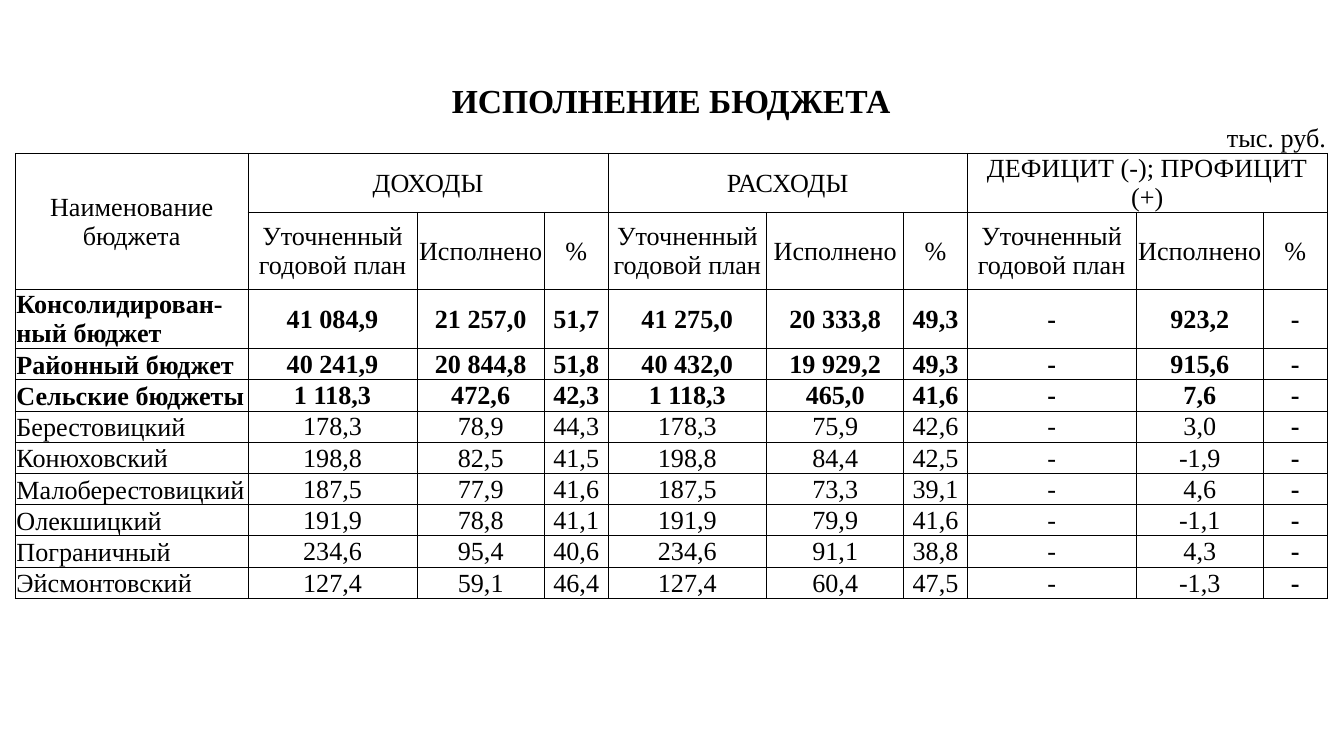
from lxml import etree
from pptx import Presentation
from pptx.dml.color import RGBColor
from pptx.enum.text import MSO_ANCHOR, PP_ALIGN
from pptx.oxml.ns import qn
from pptx.util import Cm, Pt

LEFT, CENTER, RIGHT = PP_ALIGN.LEFT, PP_ALIGN.CENTER, PP_ALIGN.RIGHT
MIDDLE, BOTTOM = MSO_ANCHOR.MIDDLE, MSO_ANCHOR.BOTTOM

FONT = "Times New Roman"
BLACK = "000000"
PLAIN_STYLE = "{2D5ABB26-0587-4C30-8999-92F81FD0307C}"
ALL_SIDES = ("L", "R", "T", "B")

COLUMN_WIDTHS = [4.4, 2.56, 0.63, 1.66, 0.75, 1.2, 3, 0.53,
                 2.06, 0.23, 0.97, 3.19, 1.32, 1.09, 1.2]
ROW_HEIGHTS = [0.72, 0.58, 1.11, 1.46, 1.11] + [0.59] * 8

UNIT_ROW, GROUP_ROW, FIELD_ROW, FIRST_BUDGET_ROW = 1, 2, 3, 4
UNIT_SPANS = [(0, 1), (1, 1), (2, 2), (4, 2), (6, 2), (8, 2), (10, 1), (11, 2), (13, 2)]
FIELD_SPANS = [(1, 2), (3, 2), (5, 1), (6, 1), (7, 2), (9, 2), (11, 1), (12, 2), (14, 1)]
GROUPS = [("ДОХОДЫ", 1, 5), ("РАСХОДЫ", 6, 5), ("ДЕФИЦИТ (-); ПРОФИЦИТ (+)", 11, 4)]
FIELDS = ["Уточненный годовой план", "Исполнено", "%"]

TOTAL_COUNT = 3
BUDGETS = [
    ["Консолидирован-ный бюджет", "41 084,9", "21 257,0", "51,7", "41 275,0", "20 333,8", "49,3", "923,2"],
    ["Районный бюджет", "40 241,9", "20 844,8", "51,8", "40 432,0", "19 929,2", "49,3", "915,6"],
    ["Сельские бюджеты", "1 118,3", "472,6", "42,3", "1 118,3", "465,0", "41,6", "7,6"],
    ["Берестовицкий", "178,3", "78,9", "44,3", "178,3", "75,9", "42,6", "3,0"],
    ["Конюховский", "198,8", "82,5", "41,5", "198,8", "84,4", "42,5", "-1,9"],
    ["Малоберестовицкий", "187,5", "77,9", "41,6", "187,5", "73,3", "39,1", "4,6"],
    ["Олекшицкий", "191,9", "78,8", "41,1", "191,9", "79,9", "41,6", "-1,1"],
    ["Пограничный", "234,6", "95,4", "40,6", "234,6", "91,1", "38,8", "4,3"],
    ["Эйсмонтовский", "127,4", "59,1", "46,4", "127,4", "60,4", "47,5", "-1,3"],
]


def color(value):
    """Return the colour for a hex string."""
    return RGBColor.from_string(value)


def add_borders(cell, sides):
    """Draw thin black lines on the given sides and hide the others."""
    properties = cell._tc.get_or_add_tcPr()
    for side in ALL_SIDES:
        line = etree.SubElement(properties, qn(f"a:ln{side}"), w=str(Pt(0.5)))
        if side in sides:
            fill = etree.SubElement(line, qn("a:solidFill"))
            etree.SubElement(fill, qn("a:srgbClr"), val=BLACK)
        else:
            etree.SubElement(line, qn("a:noFill"))


def prepare_cell(cell, sides):
    """Give a cell its borders, insets, clear fill and empty-text size."""
    add_borders(cell, sides)
    cell.fill.background()
    cell.margin_left = cell.margin_right = cell.margin_top = Cm(0.02)
    cell.margin_bottom = Cm(0)
    end_properties = cell.text_frame.paragraphs[0]._p.get_or_add_endParaRPr()
    end_properties.set("sz", "1400")


def merge(table, row, column, height, width):
    """Merge a block of cells when it is larger than one cell."""
    if height * width > 1:
        table.cell(row, column).merge(table.cell(row + height - 1, column + width - 1))


def write(cell, text, size=14, bold=False, alignment=CENTER, anchor=MIDDLE):
    """Write formatted text into a cell."""
    cell.text = text
    cell.vertical_anchor = anchor
    for paragraph in cell.text_frame.paragraphs:
        paragraph.alignment = alignment
        paragraph.font.name = FONT
        paragraph.font.size = Pt(size)
        paragraph.font.bold = bold
        paragraph.font.color.rgb = color(BLACK)


def add_budget_table(slide):
    """Add the empty, bordered table and return it."""
    shape = slide.shapes.add_table(
        len(ROW_HEIGHTS), len(COLUMN_WIDTHS), Cm(0.29), Cm(1.55),
        Cm(sum(COLUMN_WIDTHS)), Cm(sum(ROW_HEIGHTS)))
    table = shape.table
    table.first_row = table.horz_banding = False
    table._tbl.tblPr.find(qn("a:tableStyleId")).text = PLAIN_STYLE
    for column, width in zip(table.columns, COLUMN_WIDTHS):
        column.width = Cm(width)
    for index, height in enumerate(ROW_HEIGHTS):
        table.rows[index].height = Cm(height)
        sides = ALL_SIDES if index >= GROUP_ROW else ("B",) * index
        for cell in table.rows[index].cells:
            prepare_cell(cell, sides)
    return table


def fill_header(table):
    """Write the title, the unit and the two heading rows."""
    merge(table, 0, 0, 1, len(COLUMN_WIDTHS))
    write(table.cell(0, 0), "ИСПОЛНЕНИЕ БЮДЖЕТА", size=18, bold=True)
    for column, width in UNIT_SPANS:
        merge(table, UNIT_ROW, column, 1, width)
    write(table.cell(UNIT_ROW, 13), "тыс. руб.", alignment=RIGHT, anchor=BOTTOM)
    merge(table, GROUP_ROW, 0, 2, 1)
    write(table.cell(GROUP_ROW, 0), "Наименование\nбюджета")
    for name, column, width in GROUPS:
        merge(table, GROUP_ROW, column, 1, width)
        write(table.cell(GROUP_ROW, column), name)
    for (column, width), name in zip(FIELD_SPANS, FIELDS * len(GROUPS)):
        merge(table, FIELD_ROW, column, 1, width)
        write(table.cell(FIELD_ROW, column), name)


def fill_budget(table, row, budget, bold):
    """Write one budget row; the balance has neither plan nor percentage."""
    name, *figures, balance = budget
    write(table.cell(row, 0), name, bold=bold, alignment=LEFT, anchor=BOTTOM)
    for (column, width), value in zip(FIELD_SPANS, figures + ["-", balance, "-"]):
        merge(table, row, column, 1, width)
        is_last = column == len(COLUMN_WIDTHS) - 1
        write(table.cell(row, column), value, bold=bold or is_last)


def main():
    """Build and save the presentation."""
    presentation = Presentation()
    presentation.slide_width, presentation.slide_height = Cm(25.4), Cm(14.28)
    slide = presentation.slides.add_slide(presentation.slide_layouts[6])
    table = add_budget_table(slide)
    fill_header(table)
    for index, budget in enumerate(BUDGETS):
        fill_budget(table, FIRST_BUDGET_ROW + index, budget, index < TOTAL_COUNT)
    presentation.save("out.pptx")


if __name__ == "__main__":
    main()
